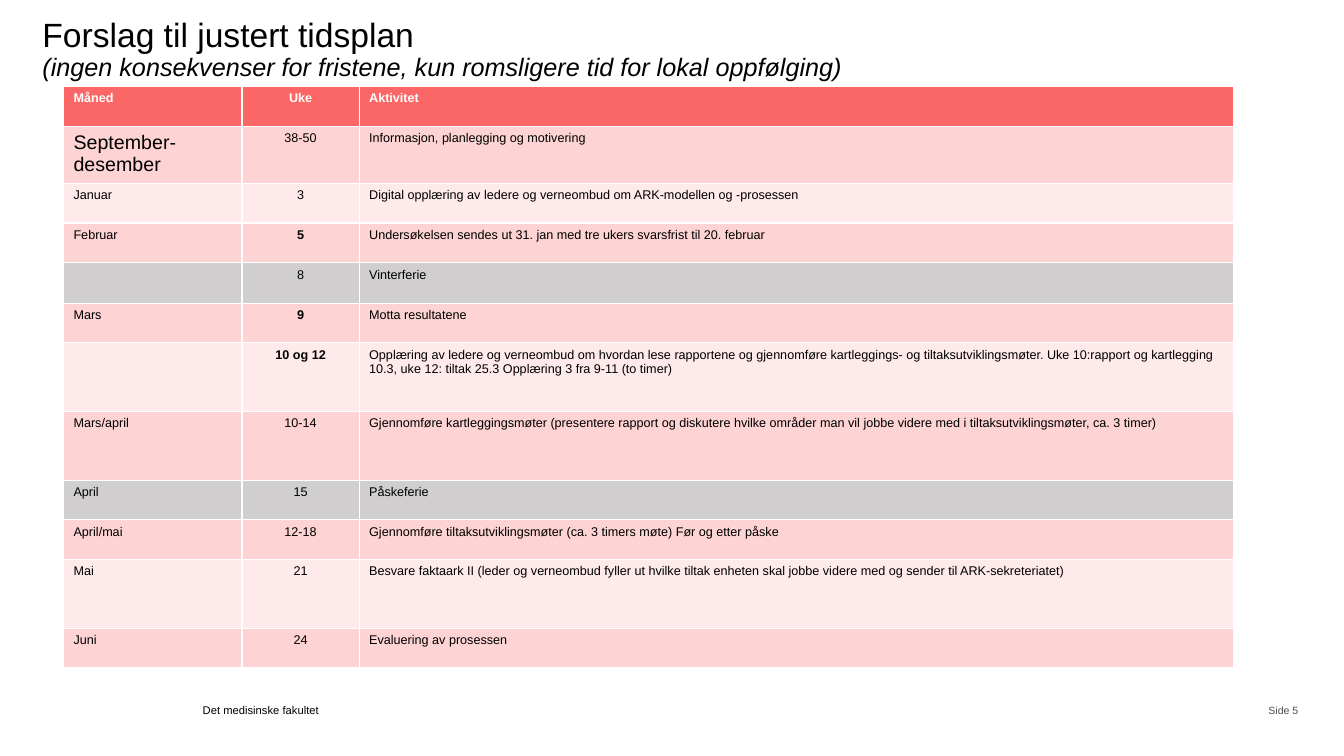
from pptx import Presentation
from pptx.dml.color import RGBColor
from pptx.enum.text import MSO_ANCHOR, PP_ALIGN
from pptx.util import Cm, Pt

TOP, MID, LOW = MSO_ANCHOR.TOP, MSO_ANCHOR.MIDDLE, MSO_ANCHOR.BOTTOM
LEFT, MIDST, RIGHT = PP_ALIGN.LEFT, PP_ALIGN.CENTER, PP_ALIGN.RIGHT

COLORS = {"head": "FB6666", "dark": "FDD3D3", "light": "FEEAEA",
          "break": "D0CECE", "ink": "000000", "white": "FFFFFF", "gray": "524B48"}

HEADS = ("Måned", "Uke", "Aktivitet")
WIDTHS = (4.5, 2.95, 22.04)
ALIGNS = (LEFT, MIDST, LEFT)
LOW_ROW, MID_ROW, TALL_ROW = 1, 1.4, 1.73
PLAN = [
    ("September- desember", "38-50", "Informasjon, planlegging og motivering", MID_ROW),
    ("Januar", "3", "Digital opplæring av ledere og verneombud om ARK-modellen og -prosessen", LOW_ROW),
    ("Februar", "5", "Undersøkelsen sendes ut 31. jan med tre ukers svarsfrist til 20. februar", LOW_ROW),
    ("", "8", "Vinterferie", LOW_ROW),
    ("Mars", "9", "Motta resultatene", LOW_ROW),
    ("", "10 og 12", "Opplæring av ledere og verneombud om hvordan lese rapportene og gjennomføre "
     "kartleggings- og tiltaksutviklingsmøter. Uke 10:rapport og kartlegging 10.3, uke 12: tiltak 25.3 "
     "Opplæring 3 fra 9-11 (to timer)", TALL_ROW),
    ("Mars/april", "10-14", "Gjennomføre kartleggingsmøter (presentere rapport og diskutere hvilke områder "
     "man vil jobbe videre med i tiltaksutviklingsmøter, ca. 3 timer)", TALL_ROW),
    ("April", "15", "Påskeferie", LOW_ROW),
    ("April/mai", "12-18", "Gjennomføre tiltaksutviklingsmøter (ca. 3 timers møte) Før og etter påske", LOW_ROW),
    ("Mai", "21", "Besvare faktaark II (leder og verneombud fyller ut hvilke tiltak enheten skal "
     "jobbe videre med og sender til ARK-sekreteriatet)", TALL_ROW),
    ("Juni", "24", "Evaluering av prosessen", LOW_ROW),
]
KEY_WEEKS = {"5", "9", "10 og 12"}


def color(name):
    return RGBColor.from_string(COLORS[name])


def add_run(para, text, size, ink="ink", **style):
    run = para.add_run()
    run.text = text
    values = {"name": "Arial", "size": Pt(size), "bold": False, **style}
    for key, value in values.items():
        setattr(run.font, key, value)
    run.font.color.rgb = color(ink)


def add_box(slide, box, anchor, inset=0.0):
    """Add an empty text box and return its first paragraph."""
    frame = slide.shapes.add_textbox(*map(Cm, box)).text_frame
    values = {"word_wrap": True, "vertical_anchor": anchor,
              "margin_left": Cm(inset), "margin_right": Cm(inset),
              "margin_top": Cm(inset / 2), "margin_bottom": Cm(inset / 2)}
    for key, value in values.items():
        setattr(frame, key, value)
    return frame.paragraphs[0]


def add_title(slide, box):
    para = add_box(slide, box, TOP)
    para.line_spacing = 0.9
    add_run(para, "Forslag til justert tidsplan", 24)
    para.add_line_break()
    add_run(para, "(ingen konsekvenser for fristene, kun romsligere tid for lokal oppfølging)",
            18, italic=True)


def fill_row(table, row, texts, fill, sizes, ink, bolds):
    for col, text in enumerate(texts):
        cell = table.cell(row, col)
        cell.fill.solid()
        cell.fill.fore_color.rgb = color(fill)
        para = cell.text_frame.paragraphs[0]
        para.alignment = ALIGNS[col]
        if text:
            add_run(para, text, sizes[col], ink, bold=bolds[col])


def add_plan(slide, left, top):
    heights = [LOW_ROW] + [entry[-1] for entry in PLAN]
    table = slide.shapes.add_table(len(heights), len(WIDTHS), Cm(left), Cm(top),
                                   Cm(sum(WIDTHS)), Cm(sum(heights))).table
    for col, width in zip(table.columns, WIDTHS):
        col.width = Cm(width)
    for row, height in zip(table.rows, heights):
        row.height = Cm(height)
    fill_row(table, 0, HEADS, "head", (9, 9, 9), "white", (True, True, True))
    for row, (month, week, task, _) in enumerate(PLAN, 1):
        band = "dark" if row % 2 else "light"
        fill = "break" if task.endswith("ferie") else band
        sizes = (14 if row == 1 else 9, 9, 9)
        fill_row(table, row, (month, week, task), fill, sizes, "ink",
                 (False, week in KEY_WEEKS, False))


def add_foot(slide, left, top):
    unit = add_box(slide, (left, top, 4.17, 0.71), LOW)
    add_run(unit, "Det medisinske fakultet", 8)
    page = add_box(slide, (left + 26.18, top + 0.05, 1.68, 1.02), MID, 0.25)
    page.alignment = RIGHT
    add_run(page, "Side 5", 7.5, "gray")


def main():
    deck = Presentation()
    deck.slide_width, deck.slide_height = Cm(33.87), Cm(19.05)
    slide = deck.slides.add_slide(deck.slide_layouts[6])
    add_title(slide, (1.07, 0.46, 31.75, 2.08))
    add_plan(slide, 1.6, 2.18)
    add_foot(slide, 5.11, 17.35)
    deck.save("out.pptx")


if __name__ == "__main__":
    main()
